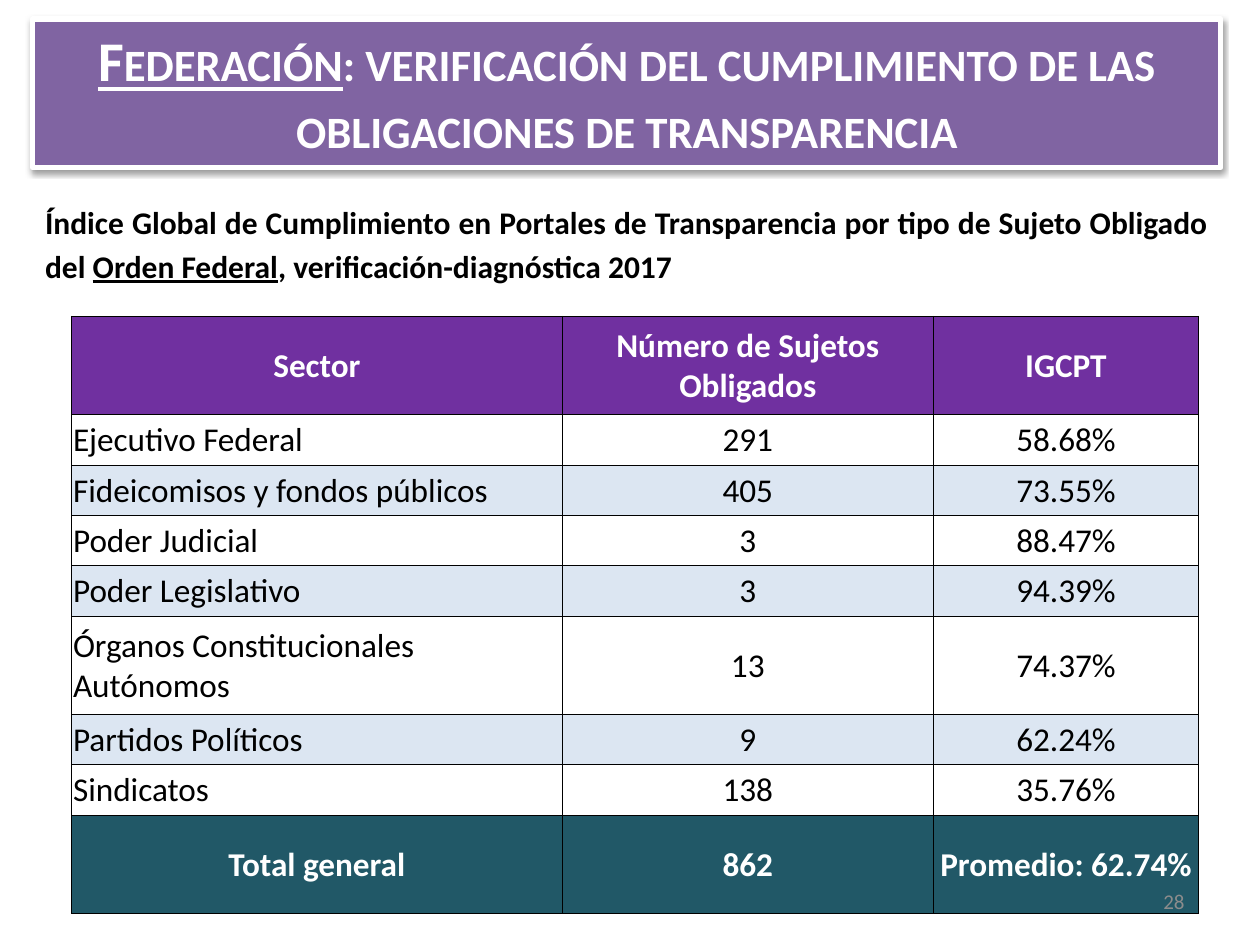
from dataclasses import dataclass

from lxml.etree import SubElement
from pptx import Presentation
from pptx.dml.color import RGBColor
from pptx.enum.text import MSO_ANCHOR, MSO_AUTO_SIZE, PP_ALIGN
from pptx.oxml import parse_xml
from pptx.oxml.ns import nsdecls, qn
from pptx.util import Inches, Pt


@dataclass(frozen=True)
class Theme:
    """Colours, typeface and type sizes of the slide."""

    font: str = "Calibri"
    white: str = "FFFFFF"
    black: str = "000000"
    grey: str = "8C8C8C"
    banner: str = "8064A2"
    header: str = "7030A0"
    band: str = "DCE6F2"
    total: str = "215867"
    title_size: int = 32
    table_size: int = 19
    subtitle_size: int = 18
    number_size: int = 12


THEME = Theme()
COLUMN_WIDTHS = (3.89, 2.95, 2.1)
ROW_HEIGHT = 0.4
TALL_ROW_HEIGHT = 0.78
TALL_ROWS = (0, 5, 8)
SECTORS = (
    ("Sector", "Número de Sujetos Obligados", "IGCPT"),
    ("Ejecutivo Federal", "291", "58.68%"),
    ("Fideicomisos y fondos públicos", "405", "73.55%"),
    ("Poder Judicial", "3", "88.47%"),
    ("Poder Legislativo", "3", "94.39%"),
    ("Órganos Constitucionales Autónomos", "13", "74.37%"),
    ("Partidos Políticos", "9", "62.24%"),
    ("Sindicatos", "138", "35.76%"),
    ("Total general", "862", "Promedio: 62.74%"),
)


def style_paragraph(para, size, color, bold=False, align=PP_ALIGN.LEFT):
    """Set the alignment and font of a whole paragraph."""
    para.alignment = align
    para.font.name = THEME.font
    para.font.size = Pt(size)
    para.font.bold = bold
    para.font.color.rgb = RGBColor.from_string(color)


def add_spans(para, spans):
    """Add (text, underlined) runs and return them."""
    runs = []
    for text, underlined in spans:
        span = para.add_run()
        span.text = text
        if underlined:
            span.font.underline = True
        runs.append(span)
    return runs


def add_shadow(shape):
    """Give a shape a soft shadow falling straight down."""
    shape._element.spPr.append(parse_xml(
        f'<a:effectLst {nsdecls("a")}>'
        f'<a:outerShdw blurRad="{Pt(3.1)}" dist="{Pt(1.6)}" dir="5400000" rotWithShape="0">'
        f'<a:srgbClr val="{THEME.black}"><a:alpha val="38000"/></a:srgbClr>'
        '</a:outerShdw></a:effectLst>'))


def add_banner(page):
    """Turn the title placeholder into the framed banner."""
    banner = page.shapes.title
    banner.left, banner.top = Inches(0.26), Inches(0.15)
    banner.width, banner.height = Inches(9.43), Inches(1.18)
    banner.fill.solid()
    banner.fill.fore_color.rgb = RGBColor.from_string(THEME.banner)
    banner.line.color.rgb = RGBColor.from_string(THEME.white)
    banner.line.width = Pt(3)
    add_shadow(banner)
    frame = banner.text_frame
    frame.word_wrap = True
    frame.auto_size = MSO_AUTO_SIZE.SHAPE_TO_FIT_TEXT
    frame.vertical_anchor = MSO_ANCHOR.TOP
    para = frame.paragraphs[0]
    style_paragraph(para, THEME.title_size, THEME.white, True, PP_ALIGN.CENTER)
    spans = add_spans(para, (
        ("Federación", True),
        (": verificación del cumplimiento de las obligaciones de transparencia", False)))
    for span in spans:
        span._r.get_or_add_rPr().set("cap", "small")


def add_text_box(page, left, top, width, height):
    """Add a wrapping text box and return its frame."""
    box = page.shapes.add_textbox(Inches(left), Inches(top), Inches(width), Inches(height))
    box.text_frame.word_wrap = True
    return box.text_frame


def add_subtitle(page):
    """Add the justified heading above the table."""
    frame = add_text_box(page, 0.26, 1.52, 9.43, 0.8)
    frame.auto_size = MSO_AUTO_SIZE.SHAPE_TO_FIT_TEXT
    para = frame.paragraphs[0]
    style_paragraph(para, THEME.subtitle_size, THEME.black, True, PP_ALIGN.JUSTIFY)
    para.line_spacing = 1.15
    para.space_after = Pt(8)
    add_spans(para, (
        ("Índice Global de Cumplimiento en Portales de Transparencia "
         "por tipo de Sujeto Obligado del ", False),
        ("Orden Federal", True),
        (", verificación-diagnóstica 2017", False)))


def add_borders(cell):
    """Draw thin black lines on the four sides of a cell."""
    properties = cell._tc.get_or_add_tcPr()
    for index, side in enumerate(("lnL", "lnR", "lnT", "lnB")):
        line = parse_xml(
            f'<a:{side} {nsdecls("a")} w="{Pt(0.5)}"/>')
        fill = SubElement(line, qn("a:solidFill"))
        SubElement(fill, qn("a:srgbClr"), val=THEME.black)
        properties.insert(index, line)


def row_fill(row):
    """Return the fill colour of a table row, or None."""
    if row == 0:
        return THEME.header
    if row == len(SECTORS) - 1:
        return THEME.total
    return THEME.band if row % 2 == 0 else None


def fill_cell(cell, text, fill, emphasised, align):
    """Write and format one table cell."""
    cell.text = text
    cell.vertical_anchor = MSO_ANCHOR.MIDDLE
    cell.margin_left = cell.margin_right = cell.margin_top = Inches(0.01)
    cell.margin_bottom = 0
    if fill:
        cell.fill.solid()
        cell.fill.fore_color.rgb = RGBColor.from_string(fill)
    else:
        cell.fill.background()
    color = THEME.white if emphasised else THEME.black
    style_paragraph(cell.text_frame.paragraphs[0], THEME.table_size, color, emphasised, align)
    add_borders(cell)


def add_sector_table(page):
    """Add the table of sectors with its header and total rows."""
    heights = [TALL_ROW_HEIGHT if row in TALL_ROWS else ROW_HEIGHT
               for row in range(len(SECTORS))]
    table = page.shapes.add_table(
        len(SECTORS), len(COLUMN_WIDTHS), Inches(0.57), Inches(2.51),
        Inches(sum(COLUMN_WIDTHS)), Inches(sum(heights))).table
    table.horz_banding = False
    for column, width in zip(table.columns, COLUMN_WIDTHS):
        column.width = Inches(width)
    for row, (texts, height) in enumerate(zip(SECTORS, heights)):
        table.rows[row].height = Inches(height)
        emphasised = row in (0, len(SECTORS) - 1)
        for column, text in enumerate(texts):
            centred = emphasised or column > 0
            align = PP_ALIGN.CENTER if centred else PP_ALIGN.LEFT
            fill_cell(table.cell(row, column), text, row_fill(row), emphasised, align)


def add_page_number(page):
    """Add the page number at the lower right."""
    frame = add_text_box(page, 7.17, 6.95, 2.33, 0.4)
    frame.vertical_anchor = MSO_ANCHOR.MIDDLE
    para = frame.paragraphs[0]
    add_spans(para, (("28", False),))
    style_paragraph(para, THEME.number_size, THEME.grey, align=PP_ALIGN.RIGHT)


def main():
    """Build the slide and save the deck."""
    deck = Presentation()
    deck.slide_width, deck.slide_height = Inches(10), Inches(7.5)
    page = deck.slides.add_slide(deck.slide_layouts.get_by_name("Title Only"))
    add_banner(page)
    add_sector_table(page)
    add_subtitle(page)
    add_page_number(page)
    deck.save("out.pptx")


if __name__ == "__main__":
    main()
